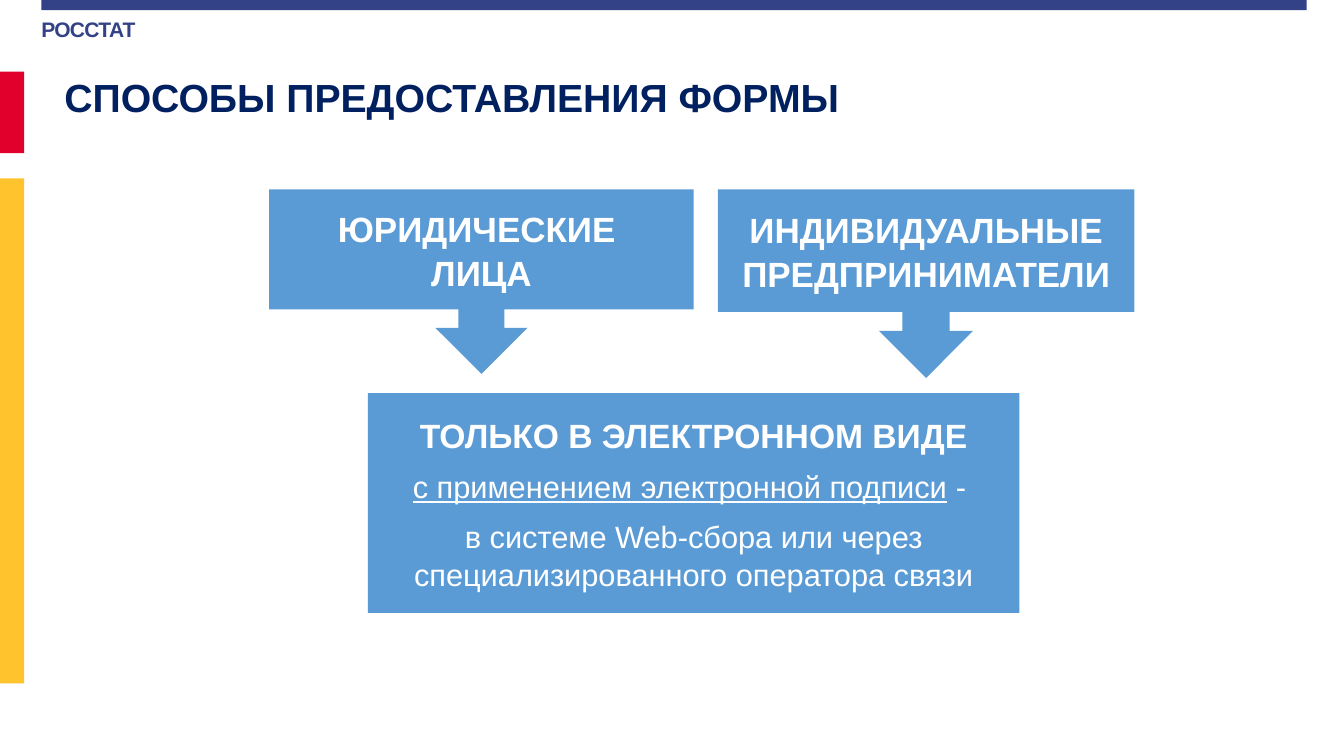
from pptx import Presentation, util as u
from pptx.dml.color import RGBColor
from pptx.enum import shapes, text

# Content
AGENCY = "РОССТАТ"
TITLE = "СПОСОБЫ ПРЕДОСТАВЛЕНИЯ ФОРМЫ"
# Each paragraph: size, bold, runs of (words, underlined)
RESPONDENTS = [
    ((2.67, 1.88, 4.21, 1.83), [(25, True, [("ЮРИДИЧЕСКИЕ ", False)]),
                                (25, True, [("ЛИЦА", False)])]),
    ((7.12, 1.88, 4.13, 1.87), [(25, True, [("ИНДИВИДУАЛЬНЫЕ ПРЕДПРИНИМАТЕЛИ", False)])]),
]
METHOD = [
    (24, True, [("ТОЛЬКО В ЭЛЕКТРОННОМ ВИДЕ", False)]),
    (22, False, [("с применением электронной подписи", True), (" - ", False)]),
    (22, False, [("в системе Web-сбора или через специализированного оператора связи", False)]),
]
BARS = [
    ((0.41, 0, 12.55, 0.1), "334286"),
    ((0, 0.71, 0.24, 0.81), "E1002B"),
    ((0, 1.77, 0.24, 5.01), "FFC32E"),
]
BLUE, WHITE, NAVY, INDIGO = "5B9BD5", "FFFFFF", "002060", "334286"

presentation = Presentation()
presentation.slide_width, presentation.slide_height = u.Inches(13.33), u.Inches(7.5)
slide = presentation.slides.add_slide(presentation.slide_layouts[6])


def color(value):
    return RGBColor.from_string(value)


def set_font(font, size, bold, value):
    font.name, font.size, font.bold = "Arial", u.Pt(size), bold
    font.color.rgb = color(value)


def set_margins(frame, margin):
    frame.margin_left = frame.margin_right = u.Inches(margin)
    frame.margin_top = frame.margin_bottom = u.Inches(margin)


def add_block(kind, box, fill):
    shape = slide.shapes.add_shape(kind, *map(u.Inches, box))
    shape.shadow.inherit = False
    shape.fill.solid()
    shape.fill.fore_color.rgb = color(fill)
    shape.line.fill.background()
    return shape


def add_label(box, words, size, value, margin):
    frame = slide.shapes.add_textbox(*map(u.Inches, box)).text_frame
    frame.word_wrap = True
    set_margins(frame, margin)
    frame.text = words
    set_font(frame.paragraphs[0].font, size, True, value)
    return frame.paragraphs[0]


def write(shape, paragraphs, margin, gap=0):
    frame = shape.text_frame
    frame.word_wrap = True
    frame.vertical_anchor = text.MSO_ANCHOR.MIDDLE
    set_margins(frame, margin)
    for index, (size, bold, runs) in enumerate(paragraphs):
        paragraph = frame.add_paragraph() if index else frame.paragraphs[0]
        paragraph.alignment = text.PP_ALIGN.CENTER
        paragraph.line_spacing = 1.04
        paragraph.space_after = u.Pt(gap)
        set_font(paragraph.font, size, bold, WHITE)
        for words, underlined in runs:
            run = paragraph.add_run()
            run.text = words
            run.font.underline = underlined


# Header and side bars
for box, fill in BARS:
    add_block(shapes.MSO_SHAPE.RECTANGLE, box, fill)
agency = add_label((0.41, 0.16, 1.15, 0.32), AGENCY, 15, INDIGO, 0)
agency.runs[0].font._element.set("spc", "-50")
add_label((0.54, 0.63, 12.67, 0.98), TITLE, 28, NAVY, 0.1)

# Respondents pointing down to the method
for box, paragraphs in RESPONDENTS:
    write(add_block(shapes.MSO_SHAPE.DOWN_ARROW_CALLOUT, box, BLUE), paragraphs, 0.19)
method = add_block(shapes.MSO_SHAPE.RECTANGLE, (3.65, 3.9, 6.46, 2.18), BLUE)
write(method, METHOD, 0.16, gap=8)

presentation.save("out.pptx")
